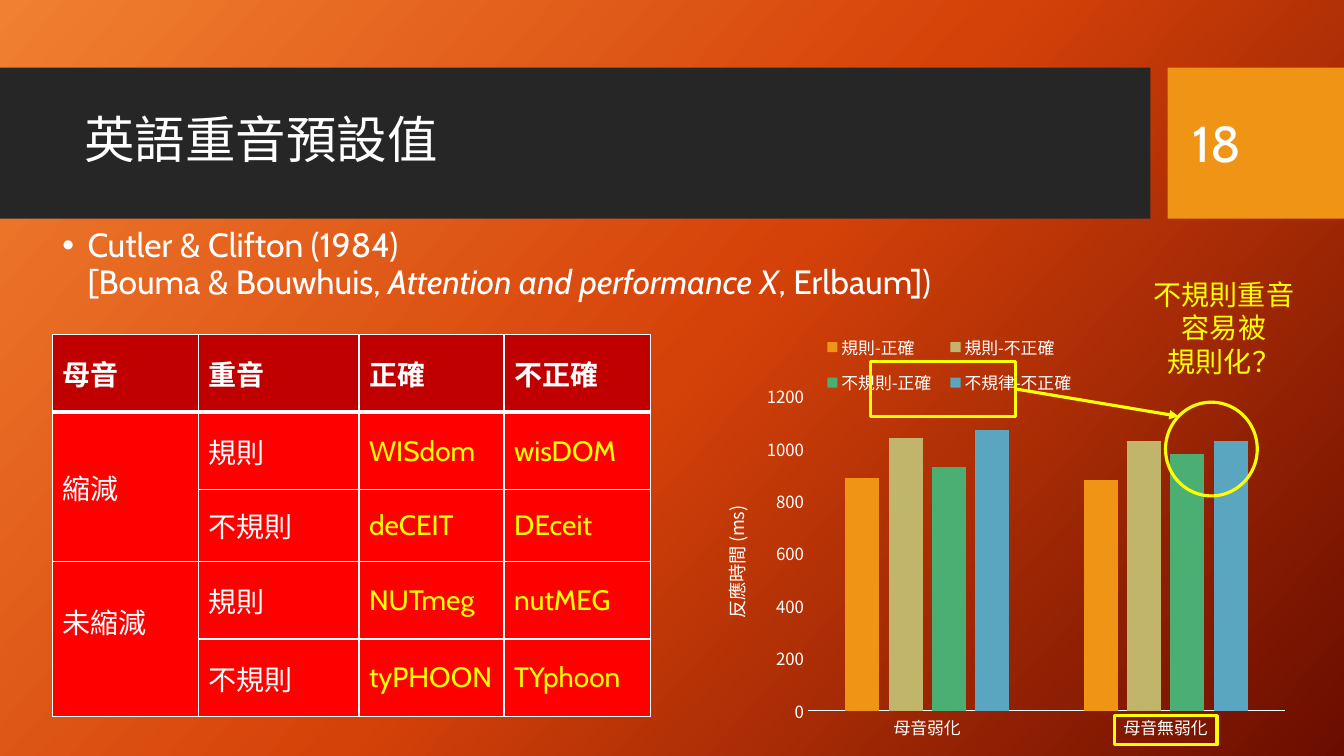
from copy import deepcopy
from lxml.etree import SubElement
from pptx import Presentation
from pptx.chart.data import CategoryChartData
from pptx.dml.color import RGBColor
from pptx.enum.chart import XL_CHART_TYPE, XL_LEGEND_POSITION, XL_TICK_MARK
from pptx.enum.shapes import MSO_CONNECTOR, MSO_SHAPE
from pptx.enum.text import MSO_ANCHOR, PP_ALIGN
from pptx.oxml import parse_xml
from pptx.oxml.ns import nsdecls, qn
from pptx.util import Inches, Pt

COLORS = {
    "white": "FFFFFF", "yellow": "FFFF00", "band": "262626", "orange": "F09415",
    "header": "C00000", "body": "FF0000", "sand": "C1B56B", "green": "4BAF73",
    "blue": "5AA6C0", "bg_light": "F18031", "bg_mid": "D54209", "bg_dark": "6A0D00",
}
CJK, LATIN = "Noto Sans CJK JP", "Cabin"


def rgb(name):
    return RGBColor.from_string(COLORS[name])


def set_font(font, size, face=CJK, color="white", bold=False):
    font.size, font.name, font.bold = Pt(size), face, bold
    font.color.rgb = rgb(color)
    SubElement(font._element, qn("a:ea")).set("typeface", face)


def add_text(slide, box, lines, size, face=CJK, color="white",
             anchor=MSO_ANCHOR.TOP, align=PP_ALIGN.LEFT, wrap=True, spacing=1.0):
    frame = slide.shapes.add_textbox(*map(Inches, box)).text_frame
    frame.word_wrap, frame.vertical_anchor = wrap, anchor
    frame.text = "\n".join(lines)
    for paragraph in frame.paragraphs:
        paragraph.alignment, paragraph.line_spacing = align, spacing
        set_font(paragraph.font, size, face, color)
    return frame


def add_panel(slide, box, fill):
    panel = slide.shapes.add_shape(MSO_SHAPE.RECTANGLE, *map(Inches, box))
    panel.shadow.inherit = False
    panel.fill.solid()
    panel.fill.fore_color.rgb = rgb(fill)
    panel.line.fill.background()


def add_outline(slide, box, preset):
    outline = slide.shapes.add_shape(preset, *map(Inches, box))
    outline.shadow.inherit = False
    outline.fill.background()
    outline.line.color.rgb = rgb("yellow")
    outline.line.width = Pt(2.25)


def paint_background(slide):
    fill = slide.background.fill
    fill.gradient()
    fill.gradient_angle = 360 - 42
    stops = slide._element.find(".//" + qn("a:gsLst"))
    stops.append(deepcopy(stops[0]))
    for index, (stop, name) in enumerate(zip(fill.gradient_stops, ("bg_light", "bg_mid", "bg_dark"))):
        stop.position = index / 2
        stop.color.rgb = rgb(name)


def add_heading(slide, box, title, number):
    left, top, width, height = box
    number_width = 1.75
    number_left = left + width - number_width
    add_panel(slide, (left, top, number_left - 0.17, height), "band")
    add_panel(slide, (number_left, top, number_width, height), "orange")
    add_text(slide, (left + 0.74, top + 0.15, 10.51, 1.18), [title], 36,
             anchor=MSO_ANCHOR.MIDDLE, spacing=0.9)
    add_text(slide, (number_left + 0.15, top + 0.15, 1.26, 1.19), [number], 36, LATIN,
             anchor=MSO_ANCHOR.MIDDLE)


def add_citation(slide, box):
    frame = slide.shapes.add_textbox(*map(Inches, box)).text_frame
    frame.word_wrap = True
    citation = frame.paragraphs[0]
    citation.line_spacing = 0.9
    properties = citation._p.get_or_add_pPr()
    properties.set("marL", str(Inches(0.25)))
    properties.set("indent", str(-Inches(0.25)))
    SubElement(properties, qn("a:buFont")).set("typeface", "Arial")
    SubElement(properties, qn("a:buChar")).set("char", "•")
    set_font(citation.font, 24, LATIN)
    citation.add_run().text = "Cutler & Clifton (1984)"
    citation.add_line_break()
    citation.add_run().text = "[Bouma & Bouwhuis, "
    book = citation.add_run()
    book.text = "Attention and performance X"
    book.font.italic = True
    citation.add_run().text = ", Erlbaum])"


def set_borders(cell, top, bottom):
    properties = cell._tc.get_or_add_tcPr()
    widths = (("L", 1), ("R", 1), ("T", top), ("B", bottom))
    for index, (side, width) in enumerate(widths):
        properties.insert(index, parse_xml(
            f'<a:ln{side} {nsdecls("a")} w="{Pt(width)}"><a:solidFill>'
            f'<a:srgbClr val="{COLORS["white"]}"/></a:solidFill></a:ln{side}>'))


def add_stress_table(slide, box):
    rows = [
        ("母音", "重音", "正確", "不正確"),
        ("縮減", "規則", "WISdom", "wisDOM"),
        ("", "不規則", "deCEIT", "DEceit"),
        ("未縮減", "規則", "NUTmeg", "nutMEG"),
        ("", "不規則", "tyPHOON", "TYphoon"),
    ]
    table = slide.shapes.add_table(len(rows), len(rows[0]), *map(Inches, box)).table
    table.horz_banding = False
    for column, width in zip(table.columns, (1.45, 1.59, 1.44, 1.45)):
        column.width = Inches(width)
    for row, height in zip(table.rows, (0.77, 0.77, 0.71, 0.77, 0.77)):
        row.height = Inches(height)
    for r, words in enumerate(rows):
        header = r == 0
        for c, word in enumerate(words):
            cell = table.cell(r, c)
            cell.text = word
            cell.vertical_anchor = MSO_ANCHOR.MIDDLE
            cell.fill.solid()
            cell.fill.fore_color.rgb = rgb("header" if header else "body")
            set_borders(cell, 3 if r == 1 else 1, 3 if header else 1)
            example = not header and c > 1
            set_font(cell.text_frame.paragraphs[0].font, 20, LATIN if example else CJK,
                     "yellow" if example else "white", header)
    for first in (1, 3):
        table.cell(first, 0).merge(table.cell(first + 1, 0))
    table.cell(3, 0).margin_bottom = Inches(0.4)


def set_layout(parent, position, box, inner=False):
    layout = parent.find(qn("c:layout"))
    if layout is not None:
        parent.remove(layout)
    target = '<c:layoutTarget val="inner"/>' if inner else ""
    modes = "".join(f'<c:{axis}Mode val="edge"/>' for axis in "xy")
    sizes = "".join(f'<c:{key} val="{value}"/>' for key, value in zip("xywh", box))
    parent.insert(position, parse_xml(
        f'<c:layout {nsdecls("c")}><c:manualLayout>{target}{modes}{sizes}'
        '</c:manualLayout></c:layout>'))


def add_reaction_chart(slide, box):
    series = [
        ("規則-正確", (890, 880), "orange"),
        ("規則-不正確", (1040, 1030), "sand"),
        ("不規則-正確", (930, 980), "green"),
        ("不規律-不正確", (1070, 1030), "blue"),
    ]
    data = CategoryChartData()
    data.categories = ["母音弱化", "母音無弱化"]
    for name, values, _ in series:
        data.add_series(name, values)
    chart = slide.shapes.add_chart(XL_CHART_TYPE.COLUMN_CLUSTERED, *map(Inches, box), data).chart
    set_font(chart.font, 12)
    chart.has_title = False
    chart.has_legend = True
    chart.legend.position = XL_LEGEND_POSITION.BOTTOM
    chart.legend.include_in_layout = False
    set_font(chart.legend.font, 12)
    set_layout(chart.legend._element, 1, (0.17, 0.04, 0.46, 0.18))
    plot = chart.plots[0]
    plot.gap_width, plot.overlap, plot.vary_by_categories = 219, -27, False
    set_layout(chart._chartSpace.find(".//" + qn("c:plotArea")), 0,
               (0.16, 0.2, 0.81, 0.7), inner=True)
    for bars, (_, _, color) in zip(plot.series, series):
        bars.format.fill.solid()
        bars.format.fill.fore_color.rgb = rgb(color)
    vowels, times = chart.category_axis, chart.value_axis
    for axis in (vowels, times):
        axis.major_tick_mark = axis.minor_tick_mark = XL_TICK_MARK.NONE
        axis.has_major_gridlines = False
        set_font(axis.tick_labels.font, 12)
    vowels.format.line.color.rgb = rgb("white")
    vowels.format.line.width = Pt(0.75)
    times.format.line.fill.background()
    times.minimum_scale, times.maximum_scale, times.major_unit = 0, 1200, 200
    caption = times.axis_title.text_frame
    caption.text = "反應時間 (ms)"
    set_font(caption.paragraphs[0].font, 13)


def add_highlights(slide, box):
    left, top = box[:2]
    add_text(slide, (left + 4.26, top - 0.34, 1.6, 1.11), ["不規則重音", "容易被", "規則化？"],
             20, color="yellow", align=PP_ALIGN.CENTER, wrap=False)
    add_outline(slide, (left + 1.55, top + 0.55, 1.44, 0.54), MSO_SHAPE.RECTANGLE)
    add_outline(slide, (left + 4.48, top + 0.95, 0.91, 0.93), MSO_SHAPE.OVAL)
    add_outline(slide, (left + 3.97, top + 4.06, 1.02, 0.29), MSO_SHAPE.RECTANGLE)
    ends = (left + 3, top + 0.82, left + 4.61, top + 1.09)
    arrow = slide.shapes.add_connector(MSO_CONNECTOR.STRAIGHT, *map(Inches, ends))
    arrow.line.color.rgb = rgb("yellow")
    arrow.line.width = Pt(2.25)
    SubElement(arrow.line._get_or_add_ln(), qn("a:tailEnd")).set("type", "triangle")
    SubElement(arrow._element.spPr, qn("a:effectLst"))


def main():
    deck = Presentation()
    deck.slide_width, deck.slide_height = Inches(13.33), Inches(7.5)
    slide = deck.slides.add_slide(deck.slide_layouts[6])
    chart_box = (7.08, 3.04, 5.84, 4.46)
    paint_background(slide)
    add_heading(slide, (0, 0.67, 13.33, 1.5), "英語重音預設值", "18")
    add_reaction_chart(slide, chart_box)
    add_citation(slide, (0.52, 2.22, 10.51, 0.96))
    add_highlights(slide, chart_box)
    add_stress_table(slide, (0.52, 3.32, 5.93, 3.79))
    deck.save("out.pptx")


if __name__ == "__main__":
    main()
